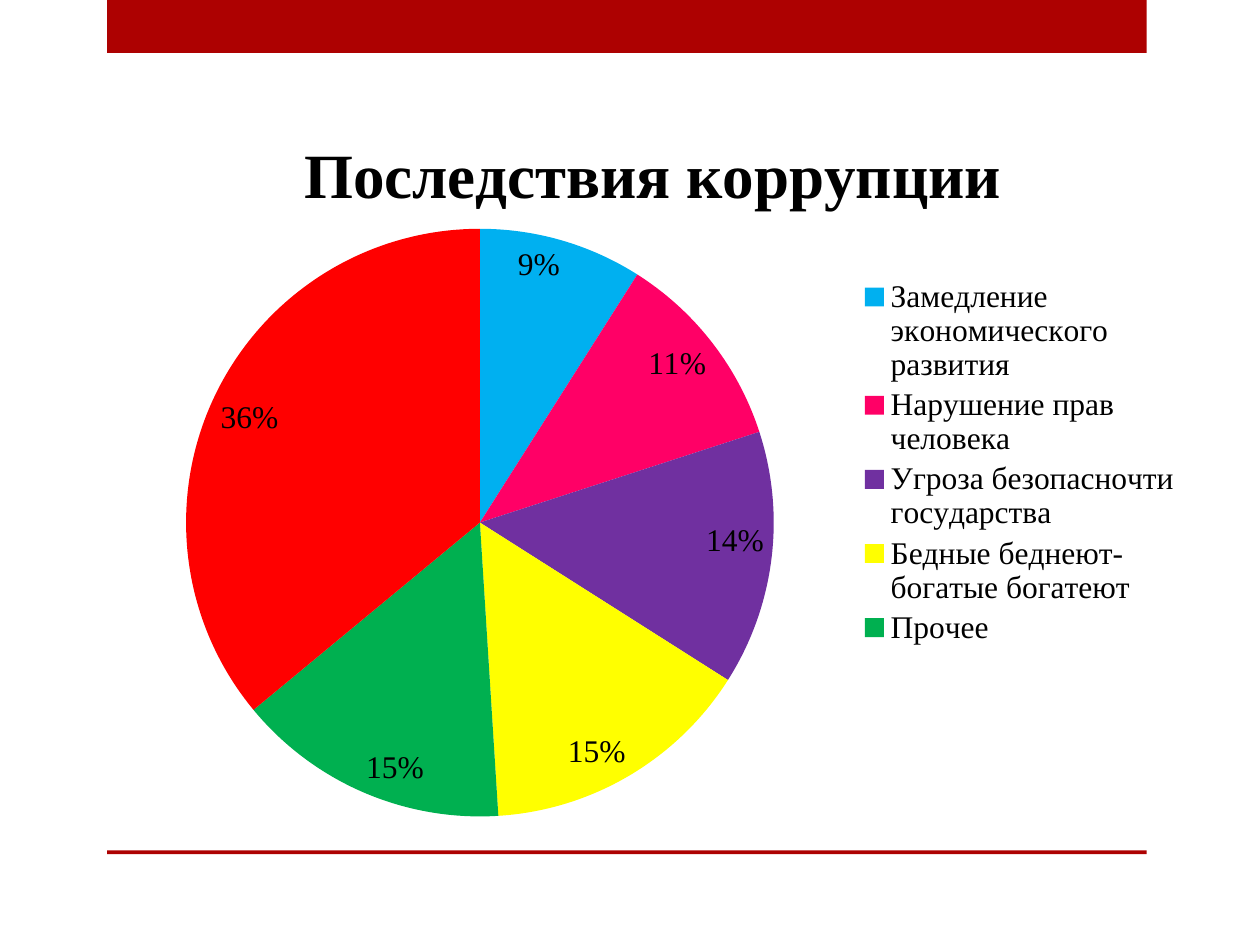
from lxml import etree
from pptx import Presentation
from pptx.chart.data import CategoryChartData
from pptx.dml.color import RGBColor
from pptx.enum.chart import XL_CHART_TYPE, XL_LABEL_POSITION, XL_LEGEND_POSITION
from pptx.oxml.ns import qn
from pptx.util import Inches, Pt


def color(value):
    return RGBColor.from_string(value)


def set_layout(element, index, **values):
    for old in element.findall(qn("c:layout")):
        element.remove(old)
    layout = etree.Element(qn("c:layout"))
    manual = etree.SubElement(layout, qn("c:manualLayout"))
    if "w" in values:
        if element.tag == qn("c:plotArea"):
            etree.SubElement(manual, qn("c:layoutTarget")).set("val", "inner")
    for name in ("xMode", "yMode"):
        etree.SubElement(manual, qn("c:" + name)).set("val", "edge")
    for name, value in values.items():
        etree.SubElement(manual, qn("c:" + name)).set("val", str(value))
    element.insert(index, layout)


prs = Presentation()
prs.slide_width, prs.slide_height = Inches(10), Inches(7.5)
slide = prs.slides.add_slide(prs.slide_layouts[6])

for top, height in ((0, 0.42), (6.75, 0.03)):
    band = slide.shapes.add_shape(1, Inches(0.85), Inches(top), Inches(8.25), Inches(height))
    band.shadow.inherit = False
    band.fill.solid()
    band.fill.fore_color.rgb = color("AD0101")
    band.line.fill.background()

consequences = [
    ("Замедление экономического развития", 9, "00B0F0"),
    ("Нарушение прав человека", 11, "FF0066"),
    ("Угроза безопасночти государства", 14, "7030A0"),
    ("Бедные беднеют- богатые богатеют", 15, "FFFF00"),
    ("Прочее", 15, "00B050"),
    ("", 36, "FF0000"),
]
heading = "Последствия коррупции"
shares = CategoryChartData()
shares.categories = [name for name, share, fill in consequences]
shares.add_series(heading, [share for name, share, fill in consequences])
pie = slide.shapes.add_chart(
    XL_CHART_TYPE.PIE, Inches(0.75), Inches(0.68), Inches(8.74), Inches(5.98), shares
).chart

for name, value in {"name": "Times New Roman", "size": Pt(18)}.items():
    setattr(pie.font, name, value)
pie.font.color.rgb = color("000000")

pie.has_title = True
title = pie.chart_title
title.text_frame.text = heading
title_font = title.text_frame.paragraphs[0].runs[0].font
for name, value in {"name": "Times New Roman", "size": Pt(36), "bold": True}.items():
    setattr(title_font, name, value)
title_font.color.rgb = color("000000")
set_layout(title._element, 1, x=0.18, y=0.05)

plot = pie.plots[0]
plot.vary_by_categories = True
for index, (name, share, fill) in enumerate(consequences):
    slice_format = plot.series[0].points[index].format
    slice_format.fill.solid()
    slice_format.fill.fore_color.rgb = color(fill)
    slice_format.line.fill.background()

plot.has_data_labels = True
labels = {
    "show_percentage": True,
    "show_value": False,
    "number_format": "0%",
    "number_format_is_linked": False,
    "position": XL_LABEL_POSITION.INSIDE_END,
}
for name, value in labels.items():
    setattr(plot.data_labels, name, value)
plot_area = pie._chartSpace.find(".//" + qn("c:plotArea"))
set_layout(plot_area, 0, x=0.08, y=0.19, w=0.54, h=0.78)

pie.has_legend = True
pie.legend.position = XL_LEGEND_POSITION.RIGHT
pie.legend.include_in_layout = False
legend = pie.legend._element
hidden = etree.Element(qn("c:legendEntry"))
etree.SubElement(hidden, qn("c:idx")).set("val", "5")
etree.SubElement(hidden, qn("c:delete")).set("val", "1")
legend.insert(1, hidden)
set_layout(legend, 2, x=0.69, y=0.25, w=0.3, h=0.5)

prs.save("out.pptx")
